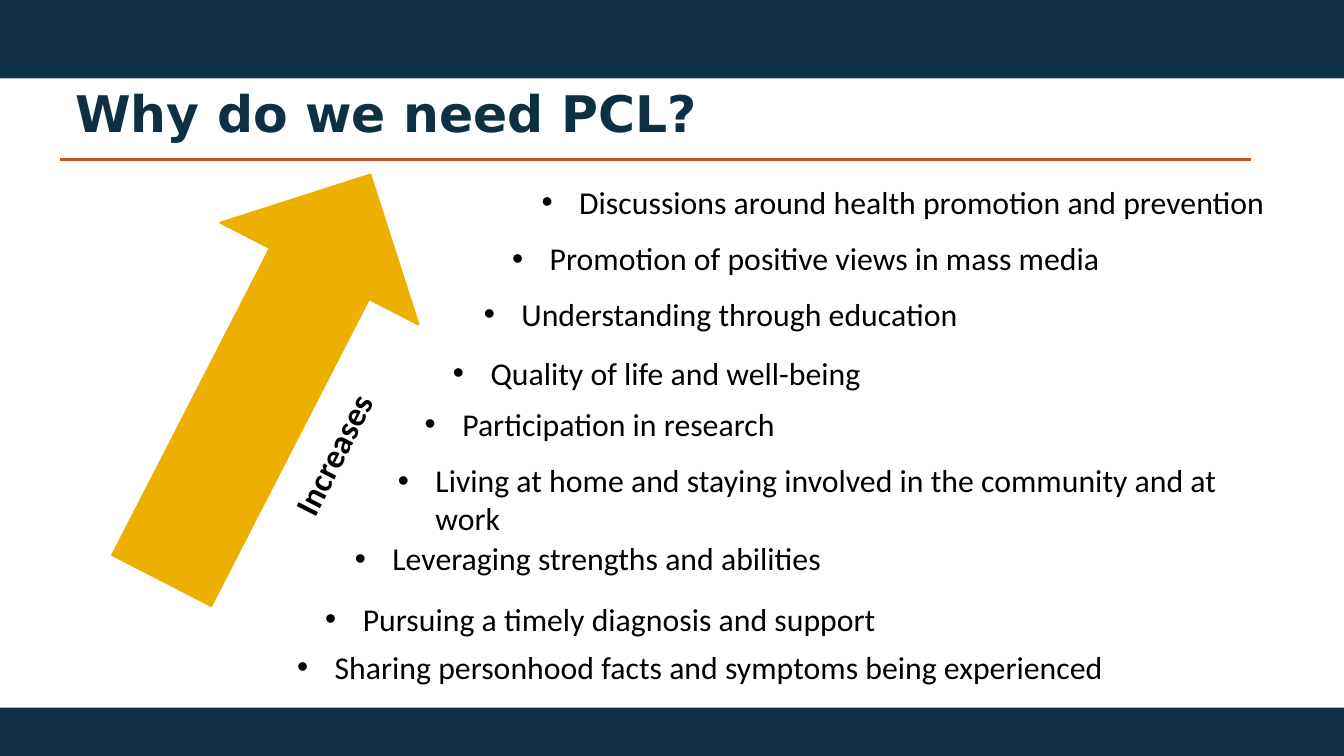
import dataclasses

import lxml.etree
import pptx
import pptx.dml.color
import pptx.enum.shapes
import pptx.enum.text
import pptx.oxml.ns
import pptx.util

WIDE = pptx.util.Inches(10)
HIGH = WIDE * 9 // 16
INCH = pptx.util.Inches
SHAPE = pptx.enum.shapes.MSO_SHAPE
ALIGN = pptx.enum.text.PP_ALIGN
QN = pptx.oxml.ns.qn


@dataclasses.dataclass(frozen=True)
class Theme:
    navy: str = "0F2F42"
    gold: str = "EEB000"
    rust: str = "BD5527"
    black: str = "000000"
    head: str = "DejaVu Sans"
    body: str = "Calibri"
    title: int = 27
    label: int = 18
    item: int = 17


THEME = Theme()

ITEMS = [
    ("Discussions around health promotion and prevention", 39.6, 21.7, 59.4),
    ("Promotion of positive views in mass media", 37.4, 29.15, 62.2),
    ("Understanding through education", 35.3, 36.45, 69.7),
    ("Quality of life and well-being", 33, 44.25, 64.8),
    ("Participation in research", 30.9, 51, 69.7),
    ("Living at home and staying involved in the community and at work", 28.9, 58.5, 67.4),
    ("Leveraging strengths and abilities", 25.7, 68.8, 69.7),
    ("Pursuing a timely diagnosis and support", 23.5, 76.8, 69.7),
    ("Sharing personhood facts and symptoms being experienced", 21.4, 83.2, 69.7),
]


def apply(thing, form):
    for name, value in form.items():
        setattr(thing, name, value)


def color(code):
    return pptx.dml.color.RGBColor.from_string(code)


def area(left, top, width, height):
    return (int(WIDE * left / 100), int(HIGH * top / 100),
            int(WIDE * width / 100), int(HIGH * height / 100))


def write(frame, text, face, size, ink, bold=False):
    para = frame.paragraphs[0]
    run = para.add_run()
    run.text = text
    apply(run.font, {"name": face, "size": pptx.util.Pt(size), "bold": bold})
    run.font.color.rgb = color(ink)
    return para


def add_title(slide, text, place):
    title = slide.shapes.title
    apply(title, dict(zip(("left", "top", "width", "height"), place)))
    frame = title.text_frame
    apply(frame, {
        "margin_left": INCH(0.07), "margin_right": INCH(0.07),
        "margin_top": INCH(0.13), "margin_bottom": 0, "word_wrap": True,
        "auto_size": pptx.enum.text.MSO_AUTO_SIZE.NONE,
        "vertical_anchor": pptx.enum.text.MSO_ANCHOR.MIDDLE,
    })
    para = write(frame, text, THEME.head, THEME.title, THEME.navy, True)
    apply(para, {"alignment": ALIGN.LEFT, "line_spacing": 0.9})


def add_solid(slide, kind, place, paint, turn=0):
    shape = slide.shapes.add_shape(kind, *place)
    shape.shadow.inherit = False
    shape.fill.solid()
    shape.fill.fore_color.rgb = color(paint)
    shape.line.color.rgb = color(paint)
    apply(shape.line, {"width": pptx.util.Pt(1)})
    apply(shape, {"rotation": turn})
    return shape


def add_text(slide, place, upper=0.04):
    box = slide.shapes.add_textbox(*place)
    apply(box.text_frame, {
        "margin_left": INCH(0.07), "margin_right": INCH(0.07),
        "margin_top": INCH(upper), "margin_bottom": INCH(0.04),
        "word_wrap": True,
        "auto_size": pptx.enum.text.MSO_AUTO_SIZE.SHAPE_TO_FIT_TEXT,
    })
    return box


def add_label(slide, text, place, turn):
    box = add_text(slide, place)
    box.rotation = turn
    para = write(box.text_frame, text, THEME.body, THEME.label, THEME.black, True)
    para.alignment = ALIGN.CENTER


def add_item(slide, text, place):
    box = add_text(slide, place, 0.14)
    para = write(box.text_frame, text, THEME.body, THEME.item, THEME.black)
    props = para._p.get_or_add_pPr()
    props.set("marL", str(INCH(0.28)))
    props.set("indent", str(INCH(-0.28)))
    paint = lxml.etree.SubElement(props, QN("a:buClr"))
    lxml.etree.SubElement(paint, QN("a:srgbClr"), val=THEME.black)
    lxml.etree.SubElement(props, QN("a:buFont"), typeface="Arial")
    lxml.etree.SubElement(props, QN("a:buChar"), char="•")


def add_rule(slide, left, right, level):
    start, row, span, _ = area(left, level, right - left, 0)
    rule = slide.shapes.add_connector(
        pptx.enum.shapes.MSO_CONNECTOR.STRAIGHT, start, row, start + span, row)
    rule.line.color.rgb = color(THEME.rust)
    rule.line.width = pptx.util.Pt(1.5)
    lxml.etree.SubElement(rule._element.spPr, QN("a:effectLst"))


def main():
    deck = pptx.Presentation()
    apply(deck, {"slide_width": WIDE, "slide_height": HIGH})
    slide = deck.slides.add_slide(deck.slide_layouts[5])

    for place in (area(-0.1, 93.6, 100.4, 6.9), area(-0.1, -0.2, 100.2, 10.6)):
        bar = add_solid(slide, SHAPE.RECTANGLE, place, THEME.navy)
        bar.line.fill.background()

    add_title(slide, "Why do we need PCL?", area(4.9, 9.1, 86.2, 10.1))
    add_solid(slide, SHAPE.UP_ARROW, area(11.5, 19.75, 16.6, 60.4), THEME.gold, 27.2)
    add_label(slide, "Increases", area(18.3, 56.7, 12.9, 6.75), 297.1)

    for text, left, top, width in reversed(ITEMS):
        add_item(slide, text, area(left, top, width, 8.2))

    add_rule(slide, 4.5, 93.1, 21.15)
    deck.save("out.pptx")


if __name__ == "__main__":
    main()
